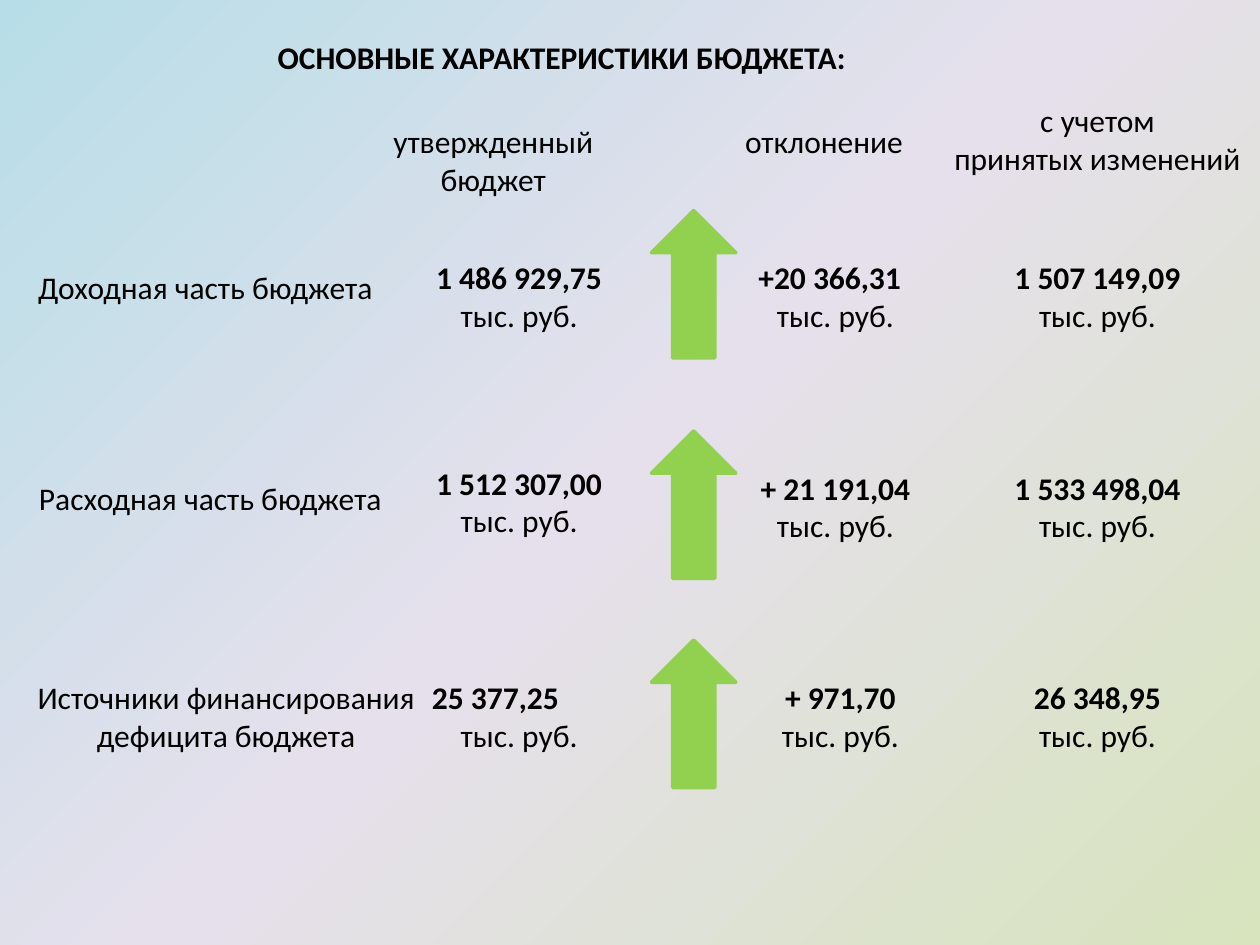
from pptx import Presentation
from pptx.dml.color import RGBColor
from pptx.enum.shapes import MSO_SHAPE as Shape
from pptx.enum.text import MSO_AUTO_SIZE as Fit, PP_ALIGN as Align
from pptx.oxml import parse_xml
from pptx.oxml.ns import nsdecls
from pptx.util import Inches, Pt

BLACK = RGBColor(0x00, 0x00, 0x00)
GREEN = RGBColor(0x92, 0xD0, 0x50)
STOPS = [(0, RGBColor(0xD7, 0xE4, 0xBD)),
         (50, RGBColor(0xE6, 0xE0, 0xEC)),
         (100, RGBColor(0xB7, 0xDE, 0xE8))]
UNIT = "тыс. руб."

deck = Presentation()
deck.slide_width, deck.slide_height = Inches(10), Inches(7.5)
slide = deck.slides.add_slide(deck.slide_layouts[6])


def put(lines, left, top, width, height=0.71, bold=0, first=Align.CENTER, wrap=True):
    """Add a text box; the first `bold` lines are bold."""
    box = slide.shapes.add_textbox(Inches(left), Inches(top), Inches(width), Inches(height))
    frame = box.text_frame
    frame.word_wrap = wrap
    frame.auto_size = Fit.SHAPE_TO_FIT_TEXT
    for i, line in enumerate(lines):
        para = frame.paragraphs[0] if i == 0 else frame.add_paragraph()
        para.alignment = first if i == 0 else Align.CENTER
        run = para.add_run()
        run.text = line
        font = run.font
        font.name, font.size, font.bold = "Calibri", Pt(18), i < bold
        font.color.rgb = BLACK


# Background gradient, spreading from the bottom right corner
stops = "".join(f'<a:gs pos="{pos * 1000}"><a:srgbClr val="{color}"/></a:gs>'
                for pos, color in STOPS)
slide.element.cSld.insert(0, parse_xml(
    f'<p:bg {nsdecls("p", "a")}><p:bgPr><a:gradFill><a:gsLst>{stops}</a:gsLst>'
    '<a:path path="circle"><a:fillToRect l="100000" t="100000"/></a:path>'
    '</a:gradFill><a:effectLst/></p:bgPr></p:bg>'))

# Title and column heads
put(["ОСНОВНЫЕ ХАРАКТЕРИСТИКИ БЮДЖЕТА:"], 2.08, 0.25, 4.76, 0.4, bold=1, wrap=False)
put(["утвержденный бюджет"], 2.75, 0.92, 2.33)
put(["отклонение"], 5.75, 0.92, 1.58, 0.4)
put(["с учетом", "принятых изменений"], 7.42, 0.75, 2.58)

# Row labels
put(["Доходная часть бюджета"], 0.17, 2.08, 2.92, 0.4)
put(["Расходная часть бюджета"], 0.17, 3.75, 3, 0.4)
put(["Источники финансирования дефицита бюджета"], 0.17, 5.33, 3.25)

# Amounts: approved, change, amended
for sum_, left, top, width, first in [
    ("1 486 929,75", 3.33, 2, 1.58, Align.CENTER),
    ("+20 366,31", 5.92, 2, 1.42, Align.LEFT),
    ("1 507 149,09", 7.92, 2, 1.58, Align.CENTER),
    ("1 512 307,00", 3.33, 3.63, 1.58, Align.CENTER),
    ("+ 21 191,04", 5.92, 3.67, 1.42, Align.CENTER),
    ("1 533 498,04", 7.92, 3.67, 1.58, Align.CENTER),
    ("25 377,25", 3.33, 5.33, 1.58, Align.LEFT),
    ("+ 971,70", 5.92, 5.33, 1.5, Align.CENTER),
    ("26 348,95", 7.92, 5.33, 1.58, Align.CENTER),
]:
    put([sum_, UNIT], left, top, width, bold=1, first=first)

# Growth arrows
for top in (1.67, 3.42, 5.08):
    arrow = slide.shapes.add_shape(Shape.DOWN_ARROW, Inches(5.17), Inches(top),
                                   Inches(0.67), Inches(1.17))
    arrow.rotation = 180
    arrow.shadow.inherit = False
    arrow.fill.solid()
    arrow.fill.fore_color.rgb = GREEN
    arrow.line.color.rgb = GREEN
    arrow.line.width = Pt(2)

deck.save("out.pptx")
